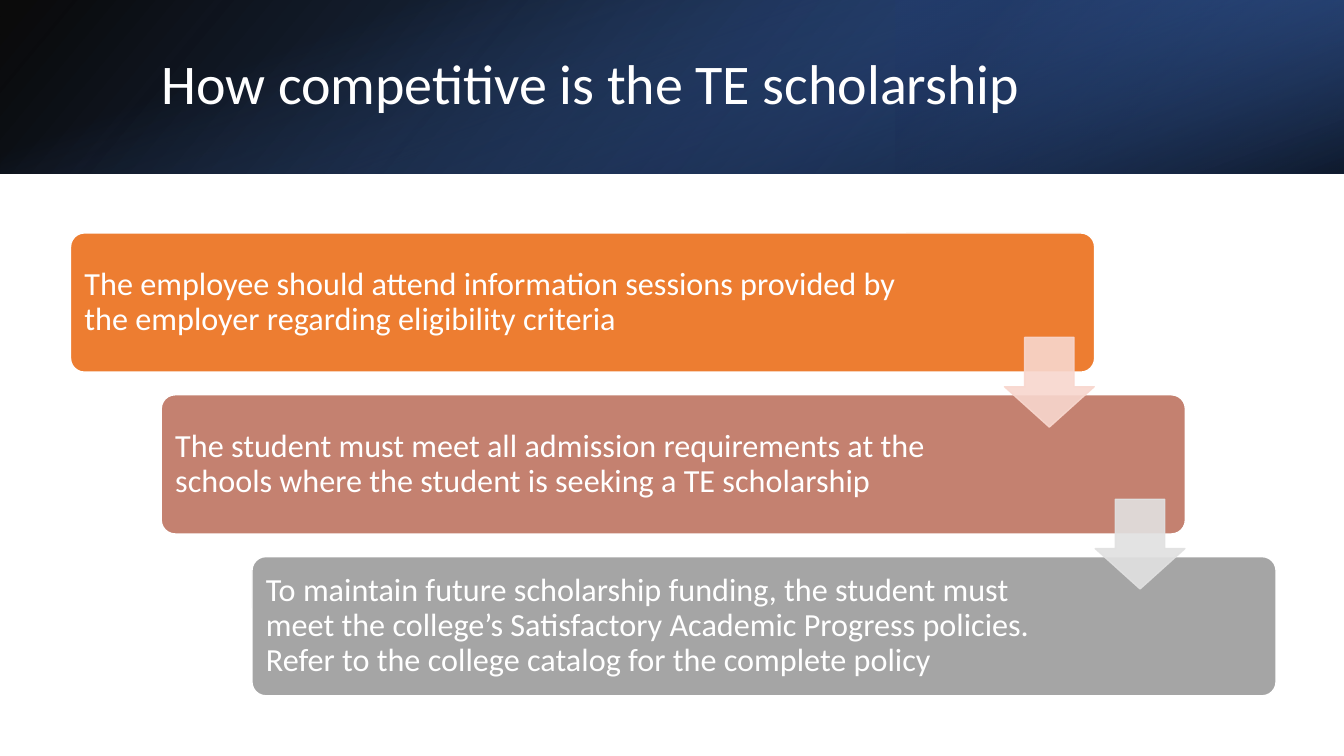
from lxml.etree import SubElement
from pptx import Presentation
from pptx.dml.color import RGBColor
from pptx.enum.shapes import MSO_SHAPE
from pptx.enum.text import MSO_ANCHOR, MSO_AUTO_SIZE, PP_ALIGN
from pptx.oxml.ns import qn
from pptx.util import Pt

COLORS = {
    "white": "FFFFFF",
    "black": "000000",
    "navy": "203864",
    "deep_blue": "2F5597",
    "blue": "4472C4",
    "orange": "ED7D31",
    "clay": "C48170",
    "gray": "A5A5A5",
    "blush": "F8D7CE",
    "silver": "E1E1E1",
}


class SlideBuilder:
    font_name = "Calibri"
    text_color = "white"

    def __init__(self, page):
        self.page = page

    def color(self, name):
        return RGBColor.from_string(COLORS[name])

    def shape(self, kind, left, top, width, height):
        shape = self.page.shapes.add_shape(kind, Pt(left), Pt(top), Pt(width), Pt(height))
        shape.shadow.inherit = False
        return shape

    def set_opacity(self, shape, percents):
        colors = shape._element.spPr.iter(qn("a:srgbClr"))
        for color, percent in zip(colors, percents):
            SubElement(color, qn("a:alpha")).set("val", str(percent * 1000))

    def paint(self, shape, color):
        shape.fill.solid()
        shape.fill.fore_color.rgb = self.color(color)

    def outline(self, shape, color):
        shape.line.color.rgb = self.color(color)
        shape.line.width = Pt(1)

    def set_text(self, frame, text, size):
        frame.word_wrap = True
        frame.auto_size = MSO_AUTO_SIZE.NONE
        frame.vertical_anchor = MSO_ANCHOR.MIDDLE
        frame.text = text
        para = frame.paragraphs[0]
        para.alignment = PP_ALIGN.LEFT
        para.line_spacing = 0.9
        para.font.name = self.font_name
        para.font.size = Pt(size)
        para.font.color.rgb = self.color(self.text_color)

    def gradient_band(self, bounds, stops, angle, rotation=0, flipped=False):
        band = self.shape(MSO_SHAPE.RECTANGLE, *bounds)
        band.line.fill.background()
        band.rotation = rotation
        if flipped:
            band._element.spPr.xfrm.set("flipH", "1")
        band.fill.gradient()
        band.fill.gradient_angle = 360 - angle
        for stop, (position, color, _) in zip(band.fill.gradient_stops, stops):
            stop.position = position
            stop.color.rgb = self.color(color)
        self.set_opacity(band, [opacity for _, _, opacity in stops])

    def title(self, text, left, top, width, height):
        title = self.page.shapes.title
        title.left, title.top = Pt(left), Pt(top)
        title.width, title.height = Pt(width), Pt(height)
        self.set_text(title.text_frame, text, 40)
        self.page.shapes._spTree.append(title._element)

    def card(self, text, color, left, top, right_margin):
        card = self.shape(MSO_SHAPE.ROUNDED_RECTANGLE, left, top, 731.5, 99.4)
        card.adjustments[0] = 0.1
        self.paint(card, color)
        self.outline(card, "white")
        card.text_frame.margin_right = Pt(right_margin)
        self.set_text(card.text_frame, text, 23)

    def arrow(self, color, left, top):
        arrow = self.shape(MSO_SHAPE.DOWN_ARROW, left, top, 64.1, 64.1)
        arrow.adjustments[0] = 0.55
        arrow.adjustments[1] = 0.45
        self.paint(arrow, color)
        self.outline(arrow, color)
        self.set_opacity(arrow, [90, 90])


STEP_X, STEP_Y = 64.8, 115.6
BAND_HEIGHT = 124
CARDS = [
    ("The employee should attend information sessions provided by "
     "the employer regarding eligibility criteria", "orange", 108.7),
    ("The student must meet all admission requirements at the "
     "schools where the student is seeking a TE scholarship", "clay", 136),
    ("To maintain future scholarship funding, the student must "
     "meet the college’s Satisfactory Academic Progress policies. "
     "Refer to the college catalog for the complete policy", "gray", 136),
]


def main():
    deck = Presentation()
    deck.slide_width, deck.slide_height = Pt(960), Pt(540)
    page = deck.slides.add_slide(deck.slide_layouts[5])
    builder = SlideBuilder(page)

    builder.gradient_band((0, 0, 960, BAND_HEIGHT),
                          [(0, "black", 96), (1, "deep_blue", 100)], 140, flipped=True)
    builder.gradient_band((640, 0, 320, BAND_HEIGHT),
                          [(0.19, "navy", 68), (1, "blue", 79)], 320, 180, True)
    builder.gradient_band((418, -418, BAND_HEIGHT, 960),
                          [(0.23, "blue", 0), (0.99, "black", 74)], 340, 90)
    builder.title("How competitive is the TE scholarship", 108, 27.4, 790.6, 69.1)

    for index, (text, color, right_margin) in enumerate(CARDS):
        builder.card(text, color, 50.4 + index * STEP_X, 166.4 + index * STEP_Y, right_margin)
    for index, color in enumerate(("blush", "silver")):
        builder.arrow(color, 717.5 + index * STEP_X, 241 + index * STEP_Y)

    deck.save("out.pptx")


if __name__ == "__main__":
    main()
